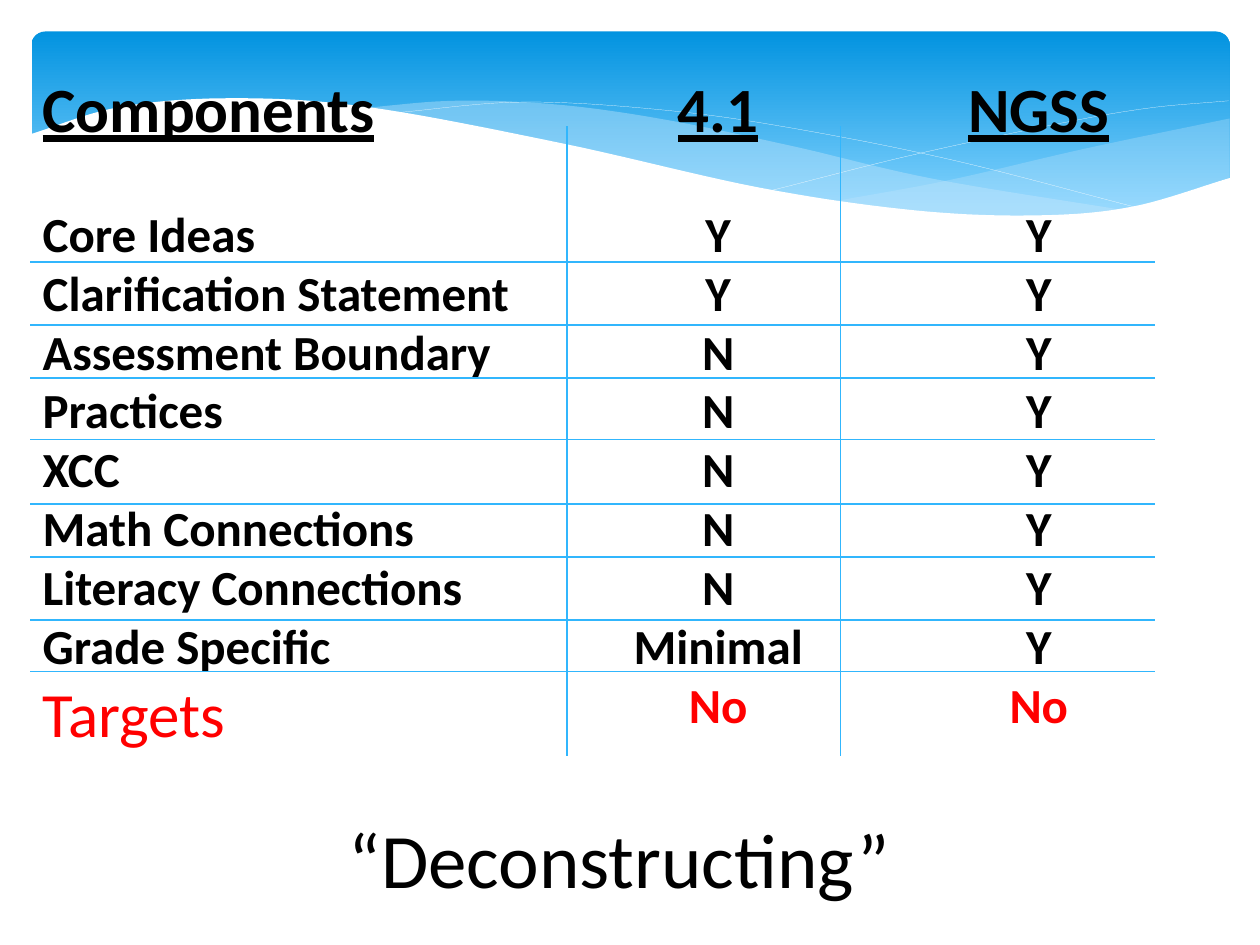
from lxml import etree
from pptx import Presentation
from pptx.dml.color import RGBColor
from pptx.enum.shapes import MSO_CONNECTOR, MSO_SHAPE
from pptx.enum.text import MSO_AUTO_SIZE, PP_ALIGN
from pptx.oxml.ns import qn
from pptx.util import Inches, Pt

STRAIGHT = MSO_CONNECTOR.STRAIGHT
ROUNDED = MSO_SHAPE.ROUNDED_RECTANGLE
GROW = MSO_AUTO_SIZE.SHAPE_TO_FIT_TEXT
LEFT, CENTER = PP_ALIGN.LEFT, PP_ALIGN.CENTER

FONT = "Calibri"
BLACK, WHITE, RED = "000000", "FFFFFF", "FF0000"
RULE_BLUE, WAVE_BLUE = "31B6FD", "C6E7FC"
BANNER_TOP, BANNER_BOTTOM = "0293E0", "83D3FE"

COMPONENTS = ["Components", "Core Ideas", "Clarification Statement",
              "Assessment Boundary", "Practices", "XCC", "Math Connections",
              "Literacy Connections", "Grade Specific", "Targets"]
STANDARD_41 = ["4.1"] + ["Y"] * 2 + ["N"] * 5 + ["Minimal", "No"]
NGSS = ["NGSS"] + ["Y"] * 8 + ["No"]

TABLE_LEFT, TABLE_RIGHT = 0.24, 9.17
COLUMN_RULES = [4.5, 6.67]
ROW_RULES = [2.08, 2.58, 3, 3.49, 4, 4.42, 4.92, 5.33]

# Each edge runs left to right through a few anchors; smooth() bends it.
PAGE_CREST = [(0.23, 1.07), (0.95, 0.85), (1.85, 0.78), (2.92, 0.85),
              (4.47, 1.14), (6.03, 1.49), (7.26, 1.67), (8.23, 1.71),
              (8.99, 1.64), (9.77, 1.41)]
PAGE_BASE = [(0.23, 2.24), (9.77, 2.24)]
MIDDLE_CREST = [(2.86, 0.86), (3.61, 0.8), (4.42, 0.83), (5.28, 0.95),
                (6.29, 1.16), (7.41, 1.42), (8.93, 1.67)]
MIDDLE_BASE = [(2.86, 0.86), (4.49, 1.16), (5.66, 1.43), (6.65, 1.61),
               (7.48, 1.7), (8.28, 1.73), (8.93, 1.67)]
RIGHT_CREST = [(6.61, 1.6), (7.53, 1.43), (8.61, 1.18), (9.76, 0.94)]
RIGHT_BASE = [(6.61, 1.6), (7.45, 1.69), (8.24, 1.72), (8.97, 1.65),
              (9.76, 1.41)]
FALLING_LINE = [(3.09, 0.9), (4.16, 0.81), (5.33, 0.88), (6.36, 1.03),
                (7.6, 1.28), (9.07, 1.66)]
RISING_LINE = [(6.13, 1.51), (7.2, 1.24), (8.36, 0.99), (9.1, 0.86),
               (9.75, 0.8)]


def color(hex_string):
    return RGBColor.from_string(hex_string)


def mirror(end, neighbour):
    """Point as far beyond an end as its neighbour lies before it."""
    return tuple(2 * e - n for e, n in zip(end, neighbour))


def smooth(anchors, steps=10):
    """Points of a Catmull-Rom curve that passes through the anchors."""
    padded = [mirror(*anchors[:2]), *anchors, mirror(*anchors[:-3:-1])]
    points = []
    for before, start, end, after in zip(padded, padded[1:], padded[2:],
                                         padded[3:]):
        for step in range(steps):
            t = step / steps
            points.append(tuple(
                b + ((c - a) * t + (2 * a - 5 * b + 4 * c - d) * t ** 2
                     + (3 * b - a - 3 * c + d) * t ** 3) / 2
                for a, b, c, d in zip(before, start, end, after)))
    return points + [anchors[-1]]


def add_outline(slide, points, closed):
    corners = [(Inches(x), Inches(y)) for x, y in points]
    builder = slide.shapes.build_freeform(*corners[0])
    builder.add_line_segments(corners[1:], close=closed)
    shape = builder.convert_to_shape()
    shape.shadow.inherit = False
    return shape


def add_wave(slide, crest, base, fill, opacity=100):
    """Filled band between two left-to-right edges."""
    wave = add_outline(slide, smooth(crest) + smooth(base)[::-1], True)
    wave.line.fill.background()
    wave.fill.solid()
    wave.fill.fore_color.rgb = color(fill)
    if opacity < 100:
        shade = wave._element.spPr.find(".//" + qn("a:srgbClr"))
        etree.SubElement(shade, qn("a:alpha"), val=str(opacity * 1000))


def add_curve(slide, anchors):
    curve = add_outline(slide, smooth(anchors), False)
    curve.fill.background()
    curve.line.color.rgb = color(WHITE)
    curve.line.width = Pt(0.1)


def add_banner(slide):
    banner = slide.shapes.add_shape(ROUNDED, Inches(0.25), Inches(0.25),
                                    Inches(9.51), Inches(1.56))
    banner.adjustments[0] = 0.07
    banner.shadow.inherit = False
    banner.line.fill.background()
    banner.fill.gradient()
    banner.fill.gradient_angle = 270
    top, bottom = banner.fill.gradient_stops
    top.color.rgb, top.position = color(BANNER_TOP), 0
    bottom.color.rgb, bottom.position = color(BANNER_BOTTOM), 0.9


def add_rule(slide, x1, y1, x2, y2):
    rule = slide.shapes.add_connector(STRAIGHT, Inches(x1), Inches(y1),
                                      Inches(x2), Inches(y2))
    rule.line.color.rgb = color(RULE_BLUE)
    rule.line.width = Pt(0.75)
    etree.SubElement(rule._element.spPr, qn("a:effectLst"))


def add_text(slide, lines, left, top, width, height, wrap):
    """Text box with one paragraph per line; returns the paragraphs."""
    box = slide.shapes.add_textbox(Inches(left), Inches(top),
                                   Inches(width), Inches(height))
    frame = box.text_frame
    frame.word_wrap = wrap
    frame.auto_size = GROW
    frame.text = "\n".join(lines)
    return frame.paragraphs


def style(paragraph, size, shade=BLACK, bold=False, align=LEFT):
    paragraph.alignment = align
    font = paragraph.font
    font.name, font.size, font.bold = FONT, Pt(size), bold
    font.color.rgb = color(shade)


def add_column(slide, entries, left, width, height, wrap=True, align=CENTER):
    """Underlined heading, a gap, the body rows and a red last row."""
    heading, *body, last = add_text(slide, entries, left, 0.5, width, height,
                                    wrap)
    style(heading, 36, bold=True, align=align)
    heading.font.underline = True
    heading.space_after = Pt(33.5)
    for paragraph in body:
        style(paragraph, 28, bold=True, align=align)
    is_label = align == LEFT
    style(last, 36 if is_label else 28, RED, not is_label, align)


def main():
    presentation = Presentation()
    presentation.slide_width = Inches(10)
    presentation.slide_height = Inches(7.5)
    slide = presentation.slides.add_slide(presentation.slide_layouts[6])

    add_banner(slide)
    add_wave(slide, RIGHT_CREST, RIGHT_BASE, WAVE_BLUE, 29)
    add_wave(slide, MIDDLE_CREST, MIDDLE_BASE, WAVE_BLUE, 40)
    for line in (FALLING_LINE, RISING_LINE):
        add_curve(slide, line)
    add_wave(slide, PAGE_CREST, PAGE_BASE, WHITE)

    add_column(slide, COMPONENTS, TABLE_LEFT, 4.01, 6.16, align=LEFT)
    add_column(slide, STANDARD_41, 4.67, 2.06, 5.89)
    add_column(slide, NGSS, 7.58, 1.33, 5.42, wrap=False)
    for x in COLUMN_RULES:
        add_rule(slide, x, 1, x, 6)
    for y in ROW_RULES:
        add_rule(slide, TABLE_LEFT, y, TABLE_RIGHT, y)

    caption, = add_text(slide, ["“Deconstructing”"], 2.67, 6.39, 4.51, 0.84,
                        wrap=False)
    style(caption, 44)

    presentation.save("out.pptx")


if __name__ == "__main__":
    main()
